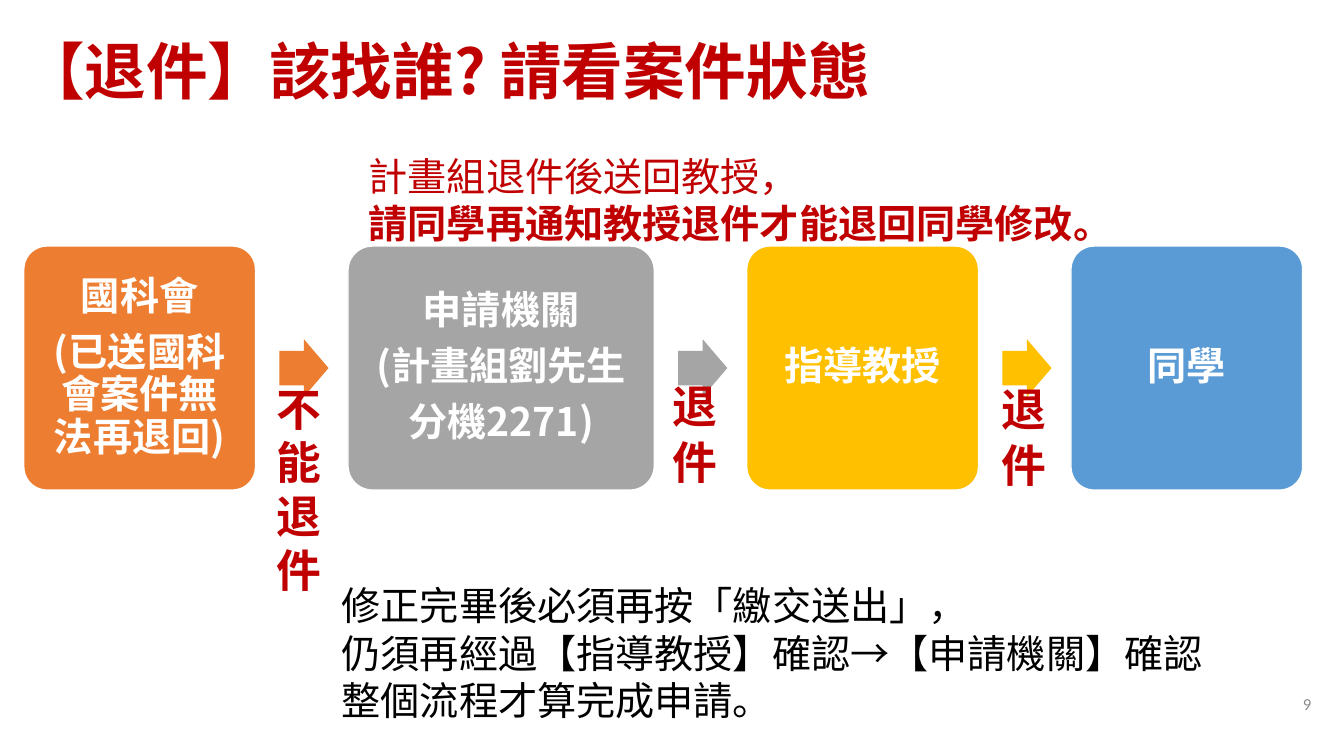
from pptx import Presentation
from pptx.dml.color import RGBColor
from pptx.enum.shapes import MSO_SHAPE
from pptx.enum.text import MSO_ANCHOR, PP_ALIGN
from pptx.oxml.ns import qn
from pptx.util import Cm, Pt
from lxml.etree import SubElement

# Content
TITLE = "【退件】該找誰? 請看案件狀態"
RETURN_NOTE = [("計畫組退件後送回教授，", False), ("請同學再通知教授退件才能退回同學修改。", True)]
RESUBMIT_NOTE = [
    "修正完畢後必須再按「繳交送出」，",
    "仍須再經過【指導教授】確認→【申請機關】確認",
    "整個流程才算完成申請。",
]
# Each stage: lines, width in cm, fill colour
STAGES = [
    (["國科會", "(已送國科會案件無法再退回)"], 5.84, "ED7D31"),
    (["申請機關", "(計畫組劉先生", "分機2271)"], 7.72, "A5A5A5"),
    (["指導教授"], 5.84, "FFC000"),
    (["同學"], 5.84, "5B9BD5"),
]
# Each arrow label: lines, left and top in cm
ARROW_LABELS = [
    (["不能退件"], 6.96, 9.58),
    (["退", "件"], 16.94, 9.52),
    (["退", "件"], 25.25, 9.6),
]
PAGE_NUMBER = "9"


class Theme:
    font, number_font = "Noto Sans CJK SC", "Calibri"
    red, black, white, grey = "C00000", "000000", "FFFFFF", "8C8C8C"
    title, label, body, number = 44, 32, 28, 12


def write_text(frame, lines, *, size=Theme.body, color=Theme.black, bold=False,
               font=Theme.font, align=PP_ALIGN.LEFT, anchor=MSO_ANCHOR.TOP,
               margins=(0.25, 0.13, 0.25, 0.13), before=0, after=0, spacing=1.0):
    """Fill a frame; a line is a string or a (string, bold) pair."""
    frame.word_wrap = True
    frame.vertical_anchor = anchor
    (frame.margin_left, frame.margin_top,
     frame.margin_right, frame.margin_bottom) = map(Cm, margins)
    for index, line in enumerate(lines):
        text, is_bold = line if isinstance(line, tuple) else (line, bold)
        paragraph = frame.paragraphs[0] if index == 0 else frame.add_paragraph()
        paragraph.alignment = align
        paragraph.space_before, paragraph.space_after = Pt(before), Pt(after)
        paragraph.line_spacing = spacing
        run = paragraph.add_run()
        run.text = text
        run.font.size, run.font.bold, run.font.name = Pt(size), is_bold, font
        run.font.color.rgb = RGBColor.from_string(color)
        SubElement(run.font._element, qn("a:ea")).set("typeface", font)


def add_text(slide, box, lines, **text_format):
    text_box = slide.shapes.add_textbox(*map(Cm, box))
    write_text(text_box.text_frame, lines, **text_format)


def add_block(slide, kind, box, fill, adjustments, outline=None):
    shape = slide.shapes.add_shape(kind, *map(Cm, box))
    shape.shadow.inherit = False
    shape.fill.solid()
    shape.fill.fore_color.rgb = RGBColor.from_string(fill)
    for index, value in enumerate(adjustments):
        shape.adjustments[index] = value
    if outline:
        shape.line.color.rgb = RGBColor.from_string(outline)
        shape.line.width = Pt(1)
    else:
        shape.line.fill.background()
    return shape


def add_flow(slide):
    left, top, height, gap = 0.6, 6.2, 6.15, 2.33
    arrow_width, arrow_height, arrow_offset = 1.24, 1.45, 0.6
    for index, (lines, width, fill) in enumerate(STAGES):
        stage = add_block(slide, MSO_SHAPE.ROUNDED_RECTANGLE,
                          (left, top, width, height), fill, [0.1], Theme.white)
        write_text(stage.text_frame, lines, color=Theme.white, bold=True,
                   align=PP_ALIGN.CENTER, anchor=MSO_ANCHOR.MIDDLE,
                   margins=(0.3,) * 4, after=9.8, spacing=0.9)
        left += width
        if index < len(STAGES) - 1:
            arrow_top = top + (height - arrow_height) / 2
            add_block(slide, MSO_SHAPE.RIGHT_ARROW,
                      (left + arrow_offset, arrow_top, arrow_width, arrow_height),
                      fill, [0.6, 0.5])
        left += gap


def main():
    presentation = Presentation()
    presentation.slide_width, presentation.slide_height = Cm(33.87), Cm(19.05)
    slide = presentation.slides.add_slide(presentation.slide_layouts[5])
    tight = dict(margins=(0, 0.03, 0, 0), before=1.1, color=Theme.red, bold=True)

    # Title
    title = slide.shapes.title
    title.left, title.top, title.width, title.height = map(Cm, (0.58, 0.79, 29.82, 1.93))
    write_text(title.text_frame, [TITLE], size=Theme.title, **tight)

    # Stages, arrows and notes
    add_flow(slide)
    add_text(slide, (9.04, 3.71, 27.38, 2.64), RETURN_NOTE, color=Theme.red)
    add_text(slide, (8.36, 14.53, 22.35, 3.84), RESUBMIT_NOTE)
    for lines, left, top in ARROW_LABELS:
        height = 1.4 * len("".join(lines))
        add_text(slide, (left, top, 2.08, height), lines, size=Theme.label, **tight)

    # Page number
    add_text(slide, (31.39, 17.22, 1.91, 1.02), [PAGE_NUMBER], size=Theme.number,
             color=Theme.grey, font=Theme.number_font, align=PP_ALIGN.RIGHT,
             anchor=MSO_ANCHOR.MIDDLE)
    presentation.save("out.pptx")


if __name__ == "__main__":
    main()
